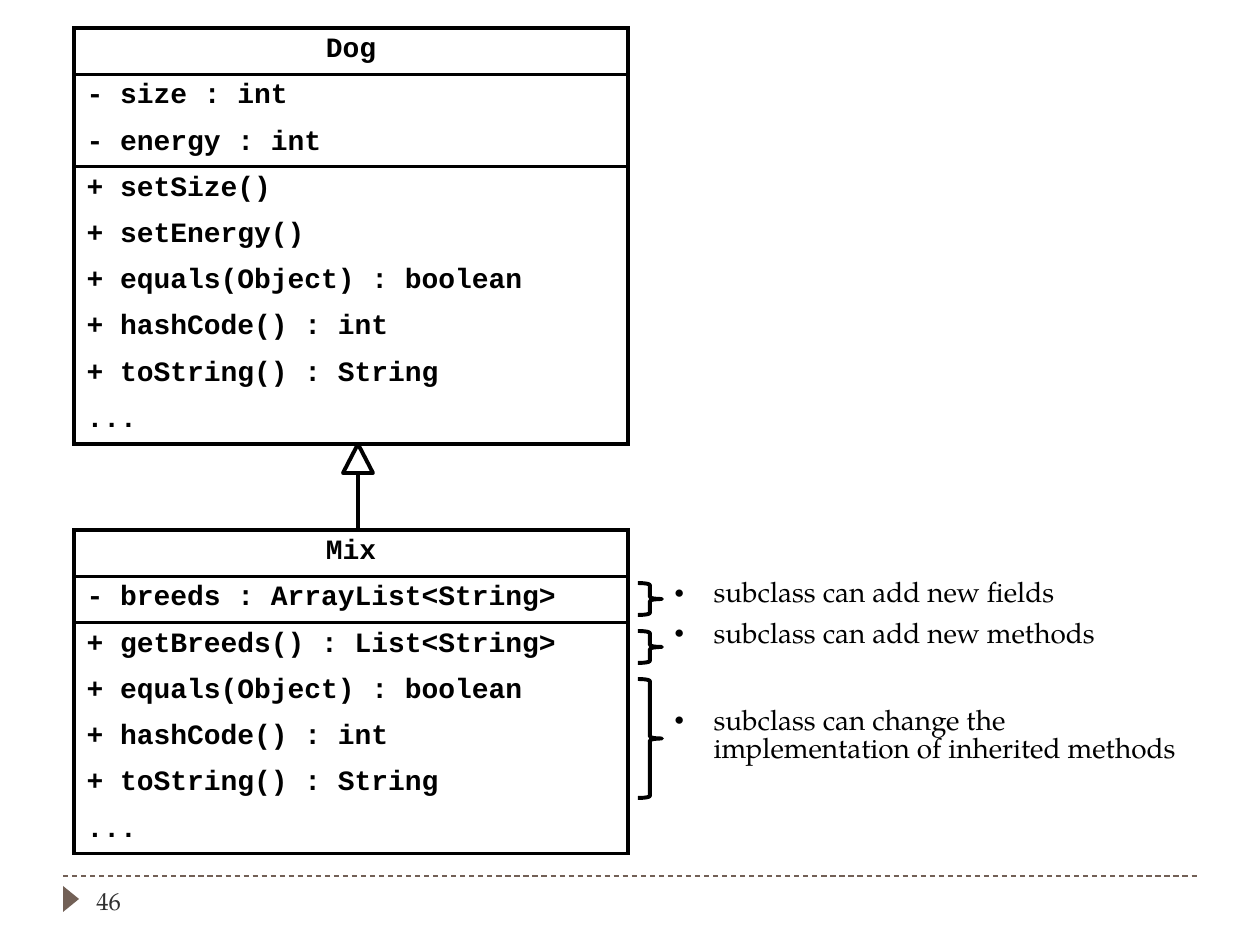
from lxml.etree import SubElement
from pptx import Presentation
from pptx.dml.color import RGBColor
from pptx.enum.dml import MSO_LINE
from pptx.enum.shapes import MSO_CONNECTOR, MSO_SHAPE
from pptx.enum.text import MSO_ANCHOR, PP_ALIGN
from pptx.oxml import parse_xml
from pptx.oxml.ns import nsdecls, qn
from pptx.util import Emu, Pt

MONO, SERIF = "Courier New", "TeX Gyre Pagella"
BLACK, WHITE, BROWN, GREY = "000000", "FFFFFF", "726056", "303030"
LINE_PT = 2.25
ROW_H = 38

# Class boxes: (top, height, sections); the first section is the class name
CLASSES = [
    (28, 416, [
        ["Dog"],
        ["- size : int", "- energy : int"],
        ["+ setSize()", "+ setEnergy()", "+ equals(Object) : boolean",
         "+ hashCode() : int", "+ toString() : String", "..."],
    ]),
    (530, 324, [
        ["Mix"],
        ["- breeds : ArrayList<String>"],
        ["+ getBreeds() : List<String>", "+ equals(Object) : boolean",
         "+ hashCode() : int", "+ toString() : String", "..."],
    ]),
]
CLASS_X, TABLE_W = 74, 554

# One entry per row beside the subclass box
NOTES = ["", "subclass can add new fields", "subclass can add new methods", "",
         "subclass can change the implementation of inherited methods", "", ""]
NOTES_BOX = (662, 530, TABLE_W, 357)
BRACES = [(679, 119), (631, 32), (583, 32)]  # (top, height)


def px(n):
    return Emu(round(n * 914400 / 126))


def rgb(color):
    return RGBColor.from_string(color)


def add_run(p, text, size, font, color, bold=False):
    r = p.add_run()
    r.text = text
    r.font.size, r.font.name, r.font.bold = Pt(size), font, bold
    r.font.color.rgb = rgb(color)


def add_line(x1, y1, x2, y2, color, width):
    cn = s.shapes.add_connector(MSO_CONNECTOR.STRAIGHT, px(x1), px(y1), px(x2), px(y2))
    cn.line.color.rgb, cn.line.width = rgb(color), Pt(width)
    SubElement(cn._element.spPr, qn("a:effectLst"))
    return cn


def add_shape(kind, x, y, w, h, fill=None, line=None):
    sp = s.shapes.add_shape(kind, px(x), px(y), px(w), px(h))
    sp.shadow.inherit = False
    if fill:
        sp.fill.solid()
        sp.fill.fore_color.rgb = rgb(fill)
    else:
        sp.fill.background()
    if line:
        sp.line.color.rgb, sp.line.width = rgb(line), Pt(LINE_PT)
    else:
        sp.line.fill.background()
    return sp


def set_borders(cell, sides):
    """Draw the sides named (out of L, R, T, B) and clear the others."""
    tc_pr = cell._tc.get_or_add_tcPr()
    for i, side in enumerate("LRTB"):
        fill = (f'<a:solidFill><a:srgbClr val="{BLACK}"/></a:solidFill>'
                if side in sides else "<a:noFill/>")
        tc_pr.insert(i, parse_xml(
            f'<a:ln{side} {nsdecls("a")} w="{Pt(LINE_PT)}">{fill}</a:ln{side}>'))


def add_table(x, y, w, h, row_sides):
    """Add a one-column table and return its cells."""
    frame = s.shapes.add_table(len(row_sides), 1, px(x), px(y), px(w), px(h))
    table = frame.table
    table.first_row = table.horz_banding = False
    for row, sides in zip(table.rows, row_sides):
        row.height = px(ROW_H)
        row.cells[0].fill.background()
        set_borders(row.cells[0], sides)
    frame.height = px(h)
    return [row.cells[0] for row in table.rows]


prs = Presentation()
prs.slide_width, prs.slide_height = px(1260), px(945)
s = prs.slides.add_slide(prs.slide_layouts[6])

# Footer: dashed rule, marker and page number
add_line(63, 876, 1197, 876, BROWN, 0.75).line.dash_style = MSO_LINE.DASH
add_shape(MSO_SHAPE.ISOSCELES_TRIANGLE, 58, 891, 26, 16, BROWN).rotation = 90
tf = s.shapes.add_textbox(px(84), px(876), px(273), px(50)).text_frame
tf.word_wrap = True
tf.vertical_anchor = MSO_ANCHOR.MIDDLE
add_run(tf.paragraphs[0], "46", 14, SERIF, GREY)

# Class boxes: a rule above and below each section
for top, height, sections in CLASSES:
    rows = [(text, "LR" + "T" * (i == 0) + "B" * (i == len(section) - 1))
            for section in sections for i, text in enumerate(section)]
    cells = add_table(CLASS_X, top, TABLE_W, height, [sides for _, sides in rows])
    for cell, (text, _) in zip(cells, rows):
        add_run(cell.text_frame.paragraphs[0], text, 16, MONO, BLACK, bold=True)
    cells[0].text_frame.paragraphs[0].alignment = PP_ALIGN.CENTER

# Inheritance arrow
add_line(358, 530, 358, 444, BLACK, LINE_PT)
add_shape(MSO_SHAPE.ISOSCELES_TRIANGLE, 343, 444, 30, 29, WHITE, BLACK)

# Notes on the subclass
for cell, text in zip(add_table(*NOTES_BOX, [""] * len(NOTES)), NOTES):
    p = cell.text_frame.paragraphs[0]
    p.line_spacing = Pt(16)
    p.font.size = Pt(16)
    if text:
        p_pr = p._p.get_or_add_pPr()
        p_pr.set("marL", str(px(39)))
        p_pr.set("indent", str(px(-39)))
        bullet = parse_xml(f'<a:buChar {nsdecls("a")} char="•"/>')
        p_pr.insert(1, bullet)
        add_run(p, text, 16, SERIF, BLACK)

for top, height in BRACES:
    add_shape(MSO_SHAPE.RIGHT_BRACE, 638, top, 24, height, line=BLACK)

prs.save("out.pptx")
